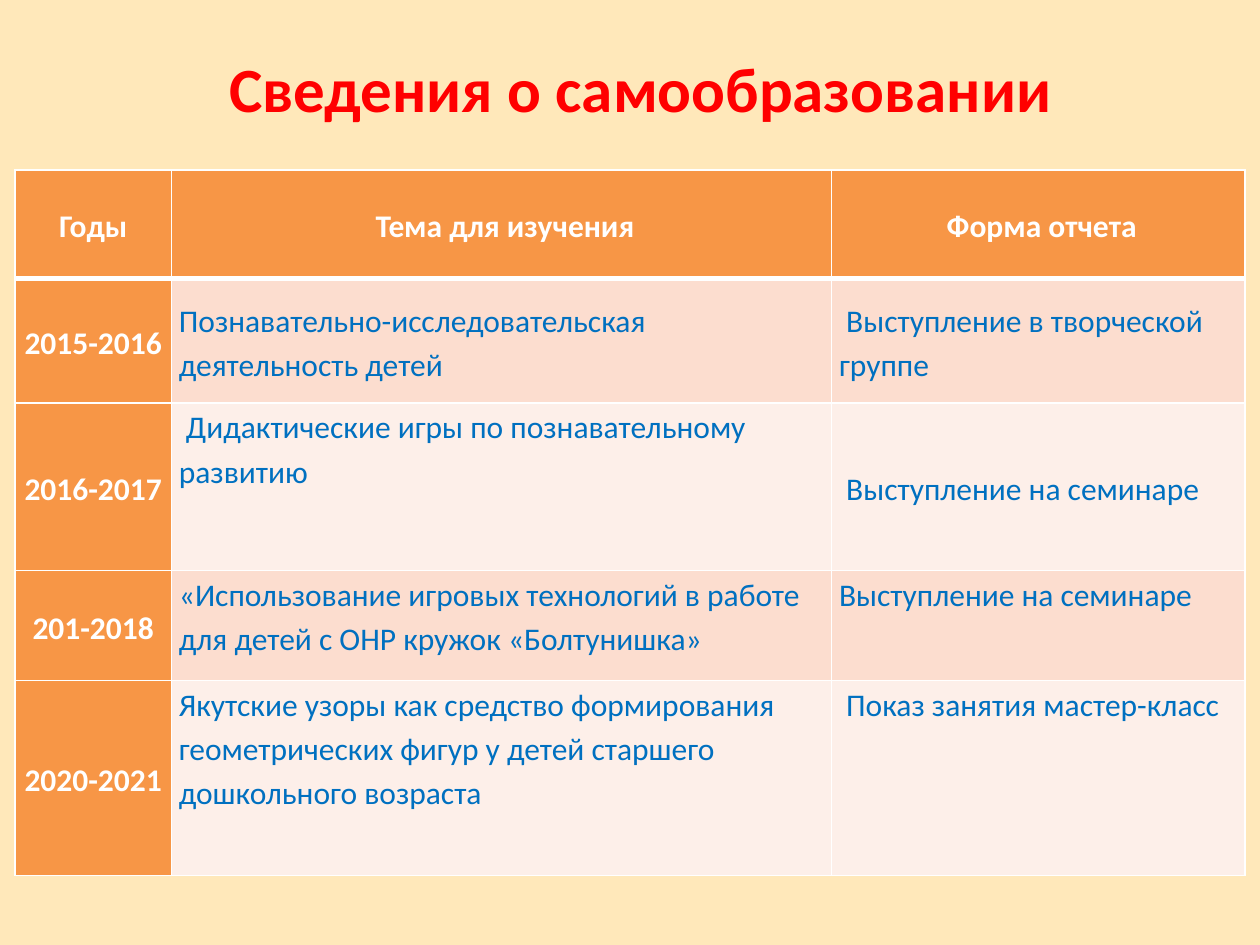
import dataclasses

import lxml.etree
import pptx
import pptx.dml.color
import pptx.enum.text
import pptx.oxml.ns
import pptx.util

Inches = pptx.util.Inches
Align = pptx.enum.text.PP_ALIGN
Anchor = pptx.enum.text.MSO_ANCHOR


@dataclasses.dataclass(frozen=True)
class Theme:
    font: str = "Calibri"
    title_size: int = 36
    table_size: int = 18
    background: str = "FFE8BA"
    title: str = "FF0000"
    header: str = "F79646"
    bands: tuple = ("FCDDCF", "FDEFE9")
    light: str = "FFFFFF"
    body: str = "0070C0"


THEME = Theme()
COLUMN_WIDTHS = (1.24, 5.24, 3.28)
ROW_HEIGHTS = (0.86, 0.99, 1.33, 0.87, 1.55)
ROWS = (
    ("Годы", " Тема для изучения", " Форма отчета"),
    ("2015-2016", "Познавательно-исследовательская деятельность детей",
     " Выступление в творческой группе"),
    ("2016-2017", " Дидактические игры по познавательному развитию",
     " Выступление на семинаре"),
    ("201-2018", "«Использование игровых технологий в работе для детей с ОНР кружок «Болтунишка»",
     "Выступление на семинаре"),
    ("2020-2021", "Якутские узоры как средство формирования геометрических фигур "
     "у детей старшего дошкольного возраста", " Показ занятия мастер-класс"),
)
CENTRED_BODY_CELLS = {(1, 1), (1, 2), (2, 2)}


def rgb(value):
    return pptx.dml.color.RGBColor.from_string(value)


def write_text(frame, text, *, size, color, bold=False, align=Align.LEFT,
               line_spacing=None, space_after=None):
    para = frame.paragraphs[0]
    para.alignment = align
    para.line_spacing = line_spacing
    if space_after is not None:
        para.space_after = pptx.util.Pt(space_after)
    span = para.add_run()
    span.text = text
    span.font.name = THEME.font
    span.font.size = pptx.util.Pt(size)
    span.font.bold = bold
    span.font.color.rgb = rgb(color)
    return para


def set_borders(cell, **widths):
    properties = cell._tc.get_or_add_tcPr()
    for position, side in enumerate(("L", "R", "T", "B")):
        line = lxml.etree.Element(pptx.oxml.ns.qn(f"a:ln{side}"))
        line.set("w", str(pptx.util.Pt(widths.get(side, 1))))
        fill = lxml.etree.SubElement(line, pptx.oxml.ns.qn("a:solidFill"))
        color = lxml.etree.SubElement(fill, pptx.oxml.ns.qn("a:srgbClr"))
        color.set("val", THEME.light)
        properties.insert(position, line)


def add_title(page, text):
    box = page.shapes.title
    box.left, box.top = Inches(0.51), Inches(0.34)
    box.width, box.height = Inches(8.66), Inches(0.71)
    frame = box.text_frame
    frame.word_wrap = True
    frame.auto_size = pptx.enum.text.MSO_AUTO_SIZE.SHAPE_TO_FIT_TEXT
    frame.vertical_anchor = Anchor.MIDDLE
    para = write_text(frame, text, size=THEME.title_size, color=THEME.title,
                      bold=True, align=Align.CENTER)
    para._p.get_or_add_pPr().set("indent", str(Inches(0.49)))


def format_cell(cell, text, row, column):
    heading = row == 0 or column == 0
    centred = heading or (row, column) in CENTRED_BODY_CELLS
    cell.margin_left = cell.margin_right = Inches(0.06)
    cell.margin_top = cell.margin_bottom = 0
    cell.vertical_anchor = Anchor.MIDDLE if centred else Anchor.TOP
    cell.fill.solid()
    cell.fill.fore_color.rgb = rgb(THEME.header if heading else THEME.bands[(row - 1) % 2])
    set_borders(cell, T=3 if row == 1 else 1, B=3 if row == 0 else 1)
    write_text(cell.text_frame, text, size=THEME.table_size, bold=heading,
               color=THEME.light if heading else THEME.body,
               align=Align.CENTER if heading else Align.LEFT,
               line_spacing=1.15, space_after=10)


def add_study_table(page):
    table = page.shapes.add_table(
        len(ROWS), len(COLUMN_WIDTHS), Inches(0.12), Inches(1.35),
        Inches(sum(COLUMN_WIDTHS)), Inches(sum(ROW_HEIGHTS))).table
    for column, width in zip(table.columns, COLUMN_WIDTHS):
        column.width = Inches(width)
    for row, height in zip(table.rows, ROW_HEIGHTS):
        row.height = Inches(height)
    for row, texts in enumerate(ROWS):
        for column, text in enumerate(texts):
            format_cell(table.cell(row, column), text, row, column)


def main():
    deck = pptx.Presentation()
    deck.slide_width, deck.slide_height = Inches(10), Inches(7.5)
    page = deck.slides.add_slide(deck.slide_layouts[5])
    page.background.fill.solid()
    page.background.fill.fore_color.rgb = rgb(THEME.background)
    add_title(page, "Сведения о самообразовании")
    add_study_table(page)
    deck.save("out.pptx")


if __name__ == "__main__":
    main()
